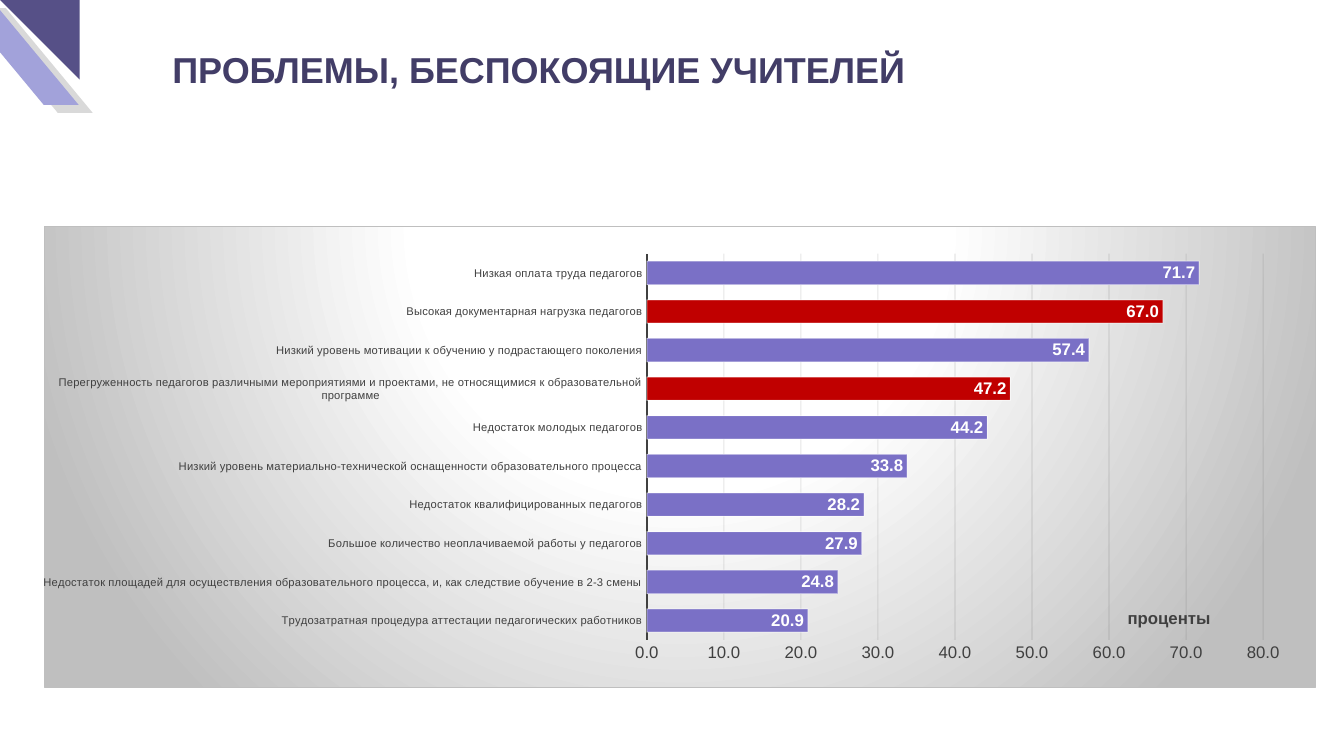
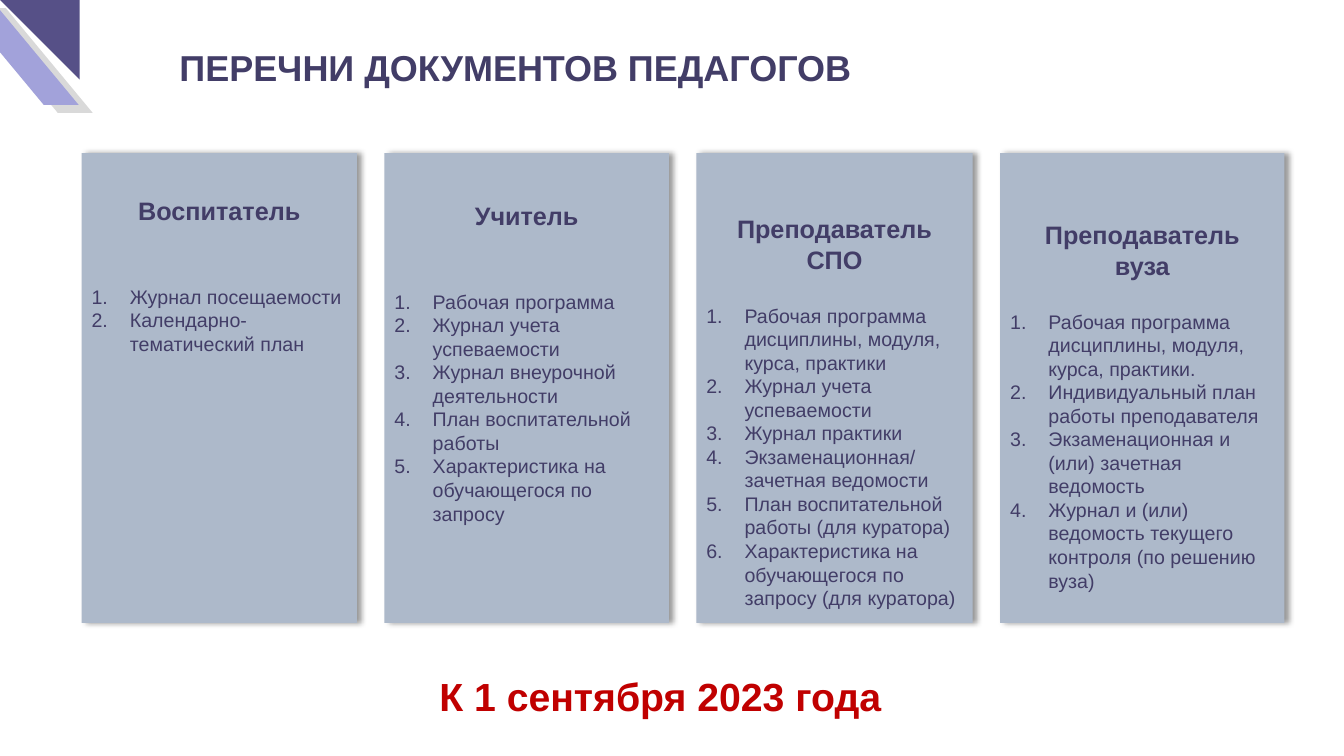
from dataclasses import dataclass

from pptx import Presentation
from pptx.chart.data import CategoryChartData
from pptx.dml.color import RGBColor
from pptx.enum.chart import XL_CHART_TYPE, XL_LABEL_POSITION, XL_TICK_MARK
from pptx.enum.shapes import MSO_SHAPE
from pptx.enum.text import MSO_ANCHOR, MSO_AUTO_SIZE, PP_ALIGN
from pptx.oxml import parse_xml
from pptx.oxml.ns import nsdecls, qn
from pptx.util import Inches, Pt


@dataclass(frozen=True)
class Theme:
    font: str = "Arial"
    ink: str = "423D67"
    accent: str = "C00000"
    bar: str = "7A70C6"
    card: str = "ADB9CA"
    axis: str = "404040"
    grid: str = "0D0D0D"
    edge: str = "BFBFBF"
    white: str = "FFFFFF"
    title: float = 25.7
    heading: float = 18
    item: float = 14
    deadline: float = 28
    label: float = 12
    category: float = 8


THEME = Theme()

CORNER = [
    (MSO_SHAPE.PARALLELOGRAM, (-0.29, 0.08, 1.21, 1.04), "D9D9D9", ("flipH",)),
    (MSO_SHAPE.PARALLELOGRAM, (-0.43, 0, 1.21, 1.04), "A2A2DA", ("flipH",)),
    (MSO_SHAPE.RIGHT_TRIANGLE, (0, 0, 0.79, 0.79), "565087", ("flipH", "flipV")),
]

PROBLEMS_TITLE = "ПРОБЛЕМЫ, БЕСПОКОЯЩИЕ УЧИТЕЛЕЙ"
PROBLEMS = [
    ("Трудозатратная процедура аттестации педагогических работников", 20.9),
    ("Недостаток площадей для осуществления образовательного процесса, "
     "и, как следствие обучение в 2-3 смены", 24.8),
    ("Большое количество неоплачиваемой работы у педагогов", 27.9),
    ("Недостаток квалифицированных педагогов", 28.2),
    ("Низкий уровень материально-технической оснащенности "
     "образовательного процесса", 33.8),
    ("Недостаток молодых педагогов", 44.2),
    ("Перегруженность педагогов различными мероприятиями и проектами, "
     "не относящимися к образовательной программе", 47.2),
    ("Низкий уровень мотивации к обучению у подрастающего поколения", 57.4),
    ("Высокая документарная нагрузка педагогов", 67),
    ("Низкая оплата труда педагогов", 71.7),
]
HIGHLIGHTED = (6, 8)
UNIT = "проценты"

DOCUMENTS_TITLE = "ПЕРЕЧНИ ДОКУМЕНТОВ ПЕДАГОГОВ"
DOCUMENTS = [
    dict(role="Воспитатель", width=2.73, top=0.42, gap=42, items=[
        "Журнал посещаемости",
        "Календарно-тематический план",
    ]),
    dict(role="Учитель", width=2.82, top=0.47, gap=42, items=[
        "Рабочая программа",
        "Журнал учета успеваемости",
        "Журнал внеурочной деятельности",
        "План воспитательной работы",
        "Характеристика на обучающегося по запросу",
    ]),
    dict(role="Преподаватель\vСПО", width=2.74, top=0.6, gap=21, items=[
        "Рабочая программа дисциплины, модуля, курса, практики",
        "Журнал учета успеваемости",
        "Журнал практики",
        "Экзаменационная/ зачетная ведомости",
        "План воспитательной работы (для куратора)",
        "Характеристика на обучающегося по запросу (для куратора)",
    ]),
    dict(role="Преподаватель\vвуза", width=2.82, top=0.66, gap=21, items=[
        "Рабочая программа дисциплины, модуля, курса, практики.",
        "Индивидуальный план работы преподавателя",
        "Экзаменационная и (или) зачетная ведомость",
        "Журнал и (или) ведомость текущего контроля (по решению вуза)",
    ]),
]
CARDS_LEFT, CARDS_RIGHT, CARDS_TOP, CARDS_HEIGHT = 0.81, 12.74, 1.52, 4.66
DEADLINE = "К 1 сентября 2023 года"


def rgb(value):
    return RGBColor.from_string(value)


def box(*lengths):
    return [Inches(length) for length in lengths]


def style(font, size, color, bold=False):
    font.name, font.size, font.bold = THEME.font, Pt(size), bold
    font.color.rgb = rgb(color)


def style_runs(paragraph, size, color, bold=False):
    for run in paragraph.runs:
        style(run.font, size, color, bold)


def add_solid(slide, preset, place, color):
    shape = slide.shapes.add_shape(preset, *box(*place))
    shape.shadow.inherit = False
    shape.fill.solid()
    shape.fill.fore_color.rgb = rgb(color)
    shape.line.fill.background()
    return shape


def decorate_layout(layout, slide):
    for depth, (preset, place, color, flips) in enumerate(CORNER):
        stripe = add_solid(slide, preset, place, color)
        if preset == MSO_SHAPE.PARALLELOGRAM:
            stripe.adjustments[0] = 0.83
        for flip in flips:
            stripe.element.xpath(".//a:xfrm")[0].set(flip, "1")
        layout.shapes.element.insert(2 + depth, stripe.element)


def set_title(slide, text, place, inset):
    title = slide.shapes.title
    title.left, title.top, title.width, title.height = box(*place)
    frame = title.text_frame
    frame.text = text
    frame.margin_left = Inches(inset)
    frame.auto_size = MSO_AUTO_SIZE.NONE
    frame.word_wrap = True
    frame.vertical_anchor = MSO_ANCHOR.TOP
    frame.paragraphs[0].alignment = PP_ALIGN.LEFT
    style_runs(frame.paragraphs[0], THEME.title, THEME.ink, True)


def place_in_chart(parent, target="", **shares):
    layout = parent.find(qn("c:layout"))
    if layout is None:
        layout = parse_xml(f"<c:layout {nsdecls('c')}/>")
        parent.insert(0, layout)
    inner = f'<c:layoutTarget val="{target}"/>' if target else ""
    modes = '<c:xMode val="edge"/><c:yMode val="edge"/>'
    sizes = "".join(f'<c:{key} val="{share}"/>' for key, share in shares.items())
    layout.append(parse_xml(
        f"<c:manualLayout {nsdecls('c')}>{inner}{modes}{sizes}</c:manualLayout>"))


def fade(chart, query, percent):
    for color in chart.element.xpath(query):
        color.append(parse_xml(f'<a:alpha {nsdecls("a")} val="{percent * 1000}"/>'))


def fill_chart_area(chart):
    stops = "".join(
        f'<a:gs pos="{share * 1000}"><a:srgbClr val="{color}"/></a:gs>'
        for share, color in ((0, THEME.white), (39, THEME.white), (100, THEME.edge)))
    chart.element.find(qn("c:chart")).addnext(parse_xml(
        f'<c:spPr {nsdecls("c", "a")}><a:gradFill><a:gsLst>{stops}</a:gsLst>'
        '<a:path path="circle"><a:fillToRect l="50000" t="-80000" r="50000" '
        'b="180000"/></a:path></a:gradFill>'
        f'<a:ln w="9525"><a:solidFill><a:srgbClr val="{THEME.edge}"/>'
        '</a:solidFill></a:ln></c:spPr>'))


def paint_bar(part, color):
    part.format.fill.solid()
    part.format.fill.fore_color.rgb = rgb(color)
    part.format.line.color.rgb = rgb(THEME.white)
    part.format.line.width = Pt(0.75)


def add_problem_chart(slide):
    data = CategoryChartData(number_format="0.0")
    data.categories = [problem for problem, _ in PROBLEMS]
    data.add_series("Series 1", [share for _, share in PROBLEMS])
    chart = slide.shapes.add_chart(
        XL_CHART_TYPE.BAR_CLUSTERED, *box(0.43, 2.24, 12.62, 4.59), data).chart
    chart.has_title = chart.has_legend = False
    style(chart.font, 10, "000000")
    fill_chart_area(chart)

    plot = chart.plots[0]
    plot.gap_width = 65
    plot.vary_by_categories = False
    bars = plot.series[0]
    paint_bar(bars, THEME.bar)
    for index in HIGHLIGHTED:
        paint_bar(bars.points[index], THEME.accent)
    labels = bars.data_labels
    labels.show_value = True
    labels.position = XL_LABEL_POSITION.INSIDE_END
    labels.number_format, labels.number_format_is_linked = "0.0", False
    style(labels.font, THEME.label, THEME.white, True)

    problems, shares = chart.category_axis, chart.value_axis
    for axis, size in ((problems, THEME.category), (shares, THEME.label)):
        axis.major_tick_mark = axis.minor_tick_mark = XL_TICK_MARK.NONE
        style(axis.tick_labels.font, size, THEME.axis)
    problems.format.line.color.rgb = rgb(THEME.axis)
    problems.format.line.width = Pt(1.5)
    shares.format.line.fill.background()
    shares.minimum_scale, shares.maximum_scale, shares.major_unit = 0, 80, 10
    shares.tick_labels.number_format = "0.0"
    shares.tick_labels.number_format_is_linked = False
    shares.major_gridlines.format.line.color.rgb = rgb(THEME.grid)
    shares.major_gridlines.format.line.width = Pt(0.75)
    unit = shares.axis_title.text_frame
    unit.text = UNIT
    style_runs(unit.paragraphs[0], THEME.label, THEME.axis, True)

    place_in_chart(chart.element.xpath(".//c:valAx/c:title")[0], x=0.85, y=0.82)
    place_in_chart(chart.element.xpath(".//c:plotArea")[0], "inner",
                   x=0.474, y=0.059, w=0.485, h=0.837)
    fade(chart, ".//c:ser//a:ln//a:srgbClr", 50)
    fade(chart, ".//c:majorGridlines//a:srgbClr", 10)


def add_shadow(shape):
    shape.element.xpath("./p:spPr/a:effectLst")[0].append(parse_xml(
        f'<a:outerShdw {nsdecls("a")} blurRad="{Pt(4)}" dist="{Pt(3)}" dir="0" '
        'algn="l" rotWithShape="0"><a:srgbClr val="000000">'
        '<a:alpha val="40000"/></a:srgbClr></a:outerShdw>'))


def number(paragraph):
    properties = paragraph._p.get_or_add_pPr()
    properties.set("marL", str(Inches(0.38)))
    properties.set("indent", str(-Inches(0.38)))
    properties.append(parse_xml(
        f'<a:buAutoNum {nsdecls("a")} type="arabicPeriod"/>'))


def add_card(slide, left, role, width, top, gap, items):
    card = add_solid(slide, MSO_SHAPE.RECTANGLE,
                     (left, CARDS_TOP, width, CARDS_HEIGHT), THEME.card)
    add_shadow(card)
    frame = card.text_frame
    frame.word_wrap = True
    frame.vertical_anchor = MSO_ANCHOR.TOP
    frame.margin_top = Inches(top)
    heading = frame.paragraphs[0]
    heading.text = role
    heading.alignment = PP_ALIGN.CENTER
    heading.space_after = Pt(gap)
    style_runs(heading, THEME.heading, THEME.ink, True)
    for item in items:
        entry = frame.add_paragraph()
        entry.text = item
        entry.alignment = PP_ALIGN.LEFT
        number(entry)
        style_runs(entry, THEME.item, THEME.ink)


def add_cards(slide):
    taken = sum(document["width"] for document in DOCUMENTS)
    gutter = (CARDS_RIGHT - CARDS_LEFT - taken) / (len(DOCUMENTS) - 1)
    left = CARDS_LEFT
    for document in DOCUMENTS:
        add_card(slide, left, **document)
        left += document["width"] + gutter


def add_deadline(slide):
    frame = slide.shapes.add_textbox(*box(4.26, 6.62, 6, 0.57)).text_frame
    frame.word_wrap = True
    frame.text = DEADLINE
    style_runs(frame.paragraphs[0], THEME.deadline, THEME.accent, True)


def main():
    deck = Presentation()
    deck.slide_width, deck.slide_height = box(13.33, 7.5)
    layout = deck.slide_layouts[5]

    problems = deck.slides.add_slide(layout)
    decorate_layout(layout, problems)
    set_title(problems, PROBLEMS_TITLE, (1.71, 0.42, 8, 0.53), 0)
    add_problem_chart(problems)

    documents = deck.slides.add_slide(layout)
    set_title(documents, DOCUMENTS_TITLE, (1.68, 0.4, 9.48, 0.53), 0.1)
    add_cards(documents)
    add_deadline(documents)

    deck.save("out.pptx")


if __name__ == "__main__":
    main()
